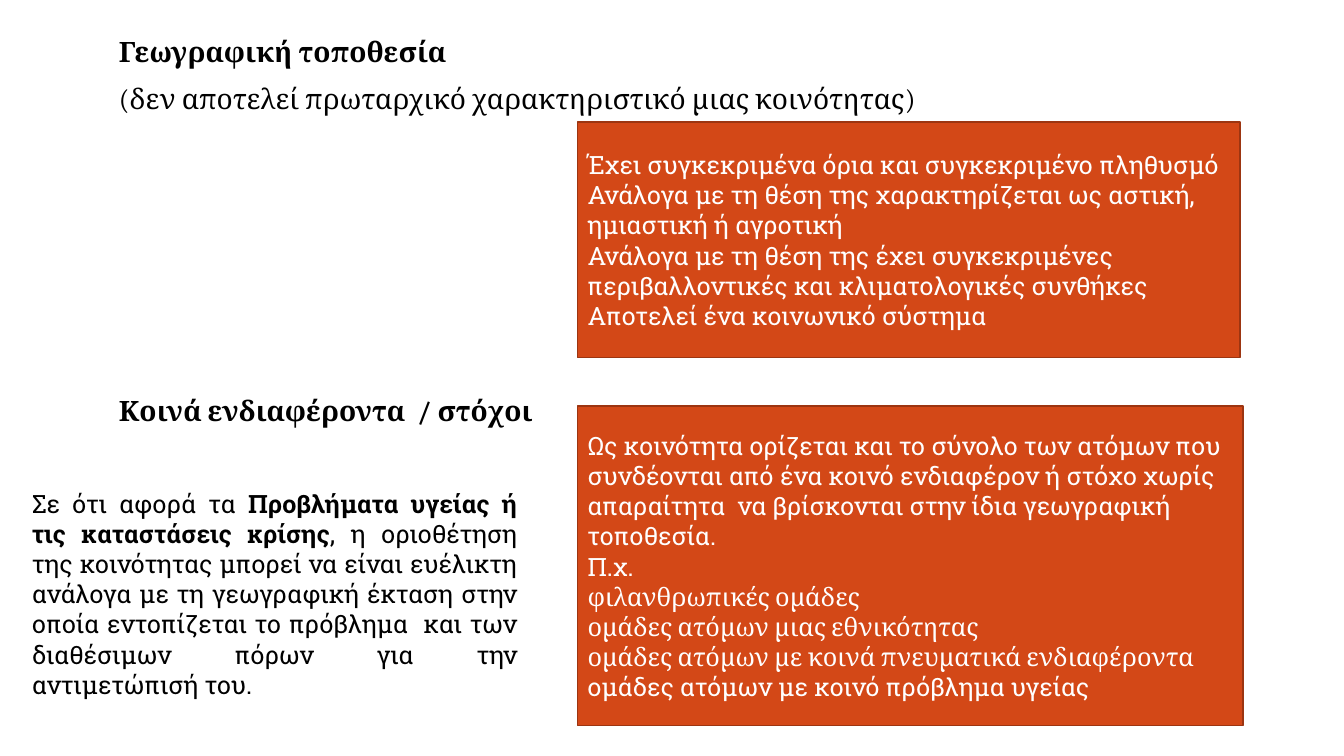
from pptx import Presentation
from pptx.dml.color import RGBColor
from pptx.enum.shapes import MSO_SHAPE
from pptx.enum.text import MSO_ANCHOR, PP_ALIGN
from pptx.util import Inches, Pt

RECTANGLE = MSO_SHAPE.RECTANGLE
TOP, MIDDLE = MSO_ANCHOR.TOP, MSO_ANCHOR.MIDDLE
LEFT, JUSTIFY = PP_ALIGN.LEFT, PP_ALIGN.JUSTIFY

COLORS = {"text": "000000", "panel": "D34817", "border": "9C3511", "panel_text": "FFFFFF"}
SERIF, SLAB = "Cambria", "Roboto Slab"

# Each paragraph is a list of runs: (text, font, bold)
LOCATION_HEADING = [
    [("Γεωγραφική τοποθεσία", SERIF, True)],
    [("(δεν αποτελεί πρωταρχικό χαρακτηριστικό μιας κοινότητας)", SERIF, False)],
]
INTERESTS_HEADING = [[("Κοινά ενδιαφέροντα  / στόχοι", SERIF, True)]]
LOCATION_TRAITS = [
    [("Έχει συγκεκριμένα όρια και συγκεκριμένο πληθυσμό", SLAB, False)],
    [("Ανάλογα με τη θέση της χαρακτηρίζεται ως αστική, ημιαστική ή αγροτική", SLAB, False)],
    [("Ανάλογα με τη θέση της έχει συγκεκριμένες περιβαλλοντικές και "
      "κλιματολογικές συνθήκες", SLAB, False)],
    [("Αποτελεί ένα κοινωνικό σύστημα", SLAB, False)],
]
INTEREST_GROUPS = [
    [("Ως κοινότητα ορίζεται και το σύνολο των ατόμων που συνδέονται από ένα κοινό "
      "ενδιαφέρον ή στόχο χωρίς απαραίτητα  να βρίσκονται στην ίδια γεωγραφική "
      "τοποθεσία.", SLAB, False)],
    [("Π.χ.", SLAB, False)],
    [("φιλανθρωπικές ομάδες", SERIF, False)],
    [("ομάδες ατόμων μιας εθνικότητας", SERIF, False)],
    [("ομάδες ατόμων με κοινά πνευματικά ενδιαφέροντα", SERIF, False)],
    [("ομάδες ατόμων με κοινό πρόβλημα υγείας", SLAB, False)],
]
HEALTH_NOTE = [[
    ("Σε ότι αφορά τα ", SLAB, False),
    ("Προβλήματα υγείας ή τις καταστάσεις κρίσης", SLAB, True),
    (", η οριοθέτηση της κοινότητας μπορεί να είναι ευέλικτη ανάλογα με τη γεωγραφική "
     "έκταση στην οποία εντοπίζεται το πρόβλημα  και των διαθέσιμων πόρων για την "
     "αντιμετώπισή του.", SLAB, False),
]]

HEADING_LEFT, PANEL_LEFT = 1.08, 5.73
HEADINGS = [
    (LOCATION_HEADING, (HEADING_LEFT, 0.33, 9.53, 0.9)),
    (INTERESTS_HEADING, (HEADING_LEFT, 3.89, 4.6, 0.45)),
]
PANELS = [
    (LOCATION_TRAITS, (PANEL_LEFT, 1.21, 6.57, 2.34)),
    (INTEREST_GROUPS, (PANEL_LEFT, 4.03, 6.6, 3.17)),
]
NOTE_BOX = (0.22, 4.79, 5.01, 2.52)


def rgb(name):
    return RGBColor.from_string(COLORS[name])


def write(shape, paragraphs, size, color="text", align=LEFT, anchor=TOP,
          line_spacing=None, gap=0):
    """Fill a shape with paragraphs, gap points apart."""
    frame = shape.text_frame
    frame.word_wrap = True
    frame.vertical_anchor = anchor
    for index, runs in enumerate(paragraphs):
        paragraph = frame.add_paragraph() if index else frame.paragraphs[0]
        paragraph.alignment = align
        if line_spacing:
            paragraph.line_spacing = line_spacing
        if index and gap:
            paragraph.space_before = Pt(gap)
        for text, font, bold in runs:
            run = paragraph.add_run()
            run.text = text
            run.font.name = font
            run.font.size = Pt(size)
            run.font.bold = bold
            run.font.color.rgb = rgb(color)


def add_panel(slide, paragraphs, box):
    panel = slide.shapes.add_shape(RECTANGLE, *map(Inches, box))
    panel.shadow.inherit = False
    panel.fill.solid()
    panel.fill.fore_color.rgb = rgb("panel")
    panel.line.color.rgb = rgb("border")
    panel.line.width = Pt(1)
    write(panel, paragraphs, 18, "panel_text", anchor=MIDDLE)


def main():
    deck = Presentation()
    deck.slide_width, deck.slide_height = Inches(13.33), Inches(7.5)
    slide = deck.slides.add_slide(deck.slide_layouts[6])
    for paragraphs, box in HEADINGS:
        heading = slide.shapes.add_textbox(*map(Inches, box))
        write(heading, paragraphs, 20, line_spacing=0.9, gap=12)
    for paragraphs, box in PANELS:
        add_panel(slide, paragraphs, box)
    note = slide.shapes.add_textbox(*map(Inches, NOTE_BOX))
    write(note, HEALTH_NOTE, 18, align=JUSTIFY)
    deck.save("out.pptx")


if __name__ == "__main__":
    main()
